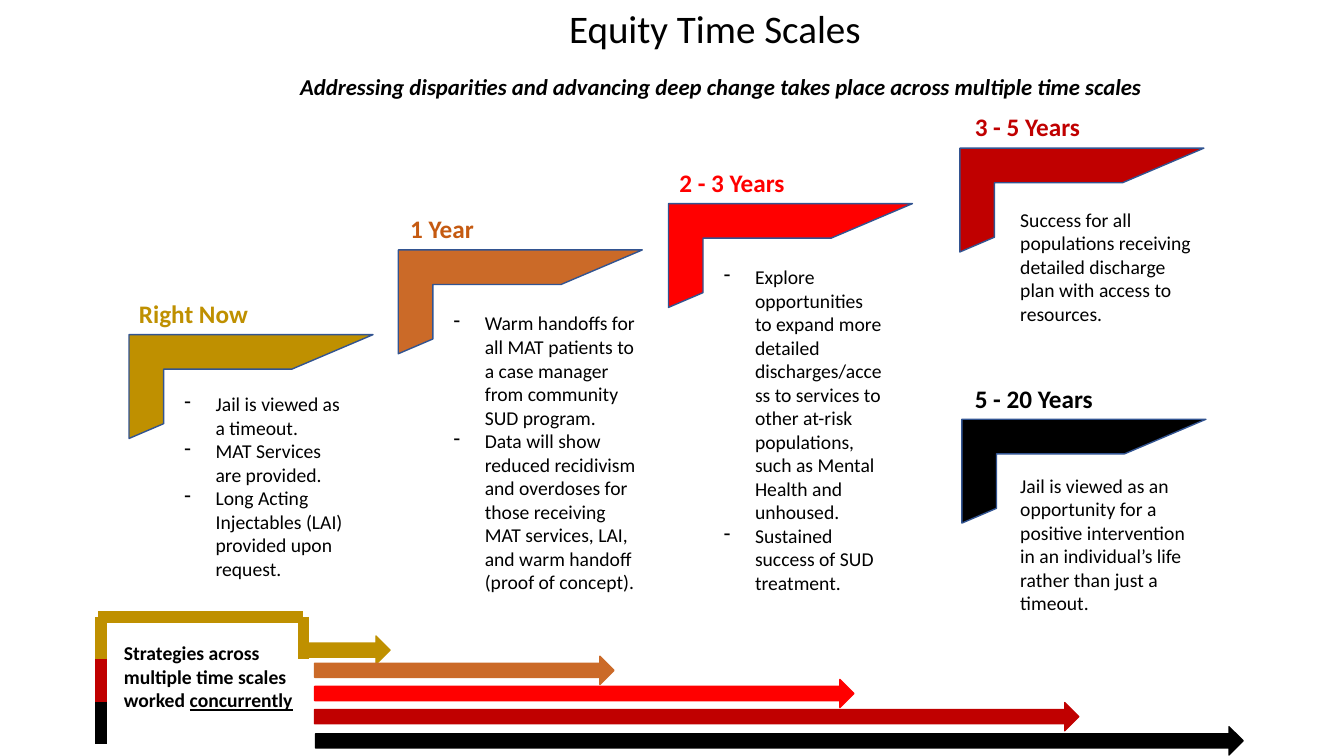
from pptx import Presentation
from pptx.dml.color import RGBColor
from pptx.enum.shapes import MSO_CONNECTOR, MSO_SHAPE
from pptx.enum.text import MSO_ANCHOR, MSO_AUTO_SIZE, PP_ALIGN
from pptx.oxml.xmlchemy import OxmlElement
from pptx.util import Inches, Pt

FONT = "Calibri"
COLORS = {
    "gold": "BF9000", "orange": "CB6A28", "rust": "C55A11", "red": "FF0000",
    "crimson": "C00000", "black": "000000", "outline": "325491",
}

TITLE = "Equity Time Scales"
SUBTITLE = "Addressing disparities and advancing deep change takes place across multiple time scales"

# label, label colour, frame colour, frame (left, top), label left, text (left, width, height), bulleted, items
STEPS = [
    ("Right Now", "gold", "gold", (1.28, 3.32), 1.28, (1.73, 1.85, 2.29), True,
     ["Jail is viewed as a timeout.", "MAT Services are provided.",
      "Long Acting Injectables (LAI) provided upon request."]),
    ("1 Year", "rust", "orange", (3.95, 2.48), 3.97, (4.4, 2.01, 3.47), True,
     ["Warm handoffs for all MAT patients to a case manager from community SUD program.",
      "Data will show reduced recidivism and overdoses for those receiving MAT services, LAI, "
      "and warm handoff (proof of concept)."]),
    ("2 - 3 Years", "red", "red", (6.63, 2.02), 6.64, (7.08, 1.79, 3.4), True,
     ["Explore opportunities to expand more detailed discharges/access to services to other "
      "at-risk populations, such as Mental Health and unhoused.",
      "Sustained success of SUD treatment."]),
    ("3 - 5 Years", "crimson", "crimson", (9.52, 1.47), 9.57, (10.02, 1.95, 1.28), False,
     ["Success for all populations receiving detailed discharge plan with access to resources."]),
    ("5 - 20 Years", "black", "black", (9.54, 4.16), 9.57, (10.02, 1.92, 1.51), False,
     ["Jail is viewed as an opportunity for a positive intervention in an individual’s life "
      "rather than just a timeout."]),
]
FRAME_SIZE = (2.42, 1.03)
LABEL_SIZE = (2.36, 0.4)
LABEL_RISE = 0.41      # label top above frame top
BULLET_INDENT = 0.31

# colour, left, top, width
ARROWS = [
    ("gold", 3.01, 6.31, 0.86),
    ("orange", 3.12, 6.51, 2.97),
    ("red", 3.12, 6.74, 5.35),
    ("crimson", 3.12, 6.97, 7.58),
    ("black", 3.13, 7.21, 9.2),
]
ARROW_HEIGHT = 0.28

# Bracket around the strategies text
BRACKET_TOP, BRACKET_STEP = 6.12, 0.42
SIDE_COLORS = ["gold", "crimson", "black"]


def color(name):
    return RGBColor.from_string(COLORS[name])


def add_span(para, text, size, color_name="black", bold=False, italic=False, underline=False):
    span = para.add_run()
    span.text = text
    font = span.font
    font.name, font.size, font.color.rgb = FONT, Pt(size), color(color_name)
    font.bold, font.italic, font.underline = bold, italic, underline


def add_box(page, left, top, width, height):
    box = page.shapes.add_textbox(Inches(left), Inches(top), Inches(width), Inches(height))
    box.text_frame.word_wrap = True
    return box.text_frame


def add_filled(page, preset, left, top, width, height, fill, line):
    shape = page.shapes.add_shape(preset, Inches(left), Inches(top), Inches(width), Inches(height))
    shape.shadow.inherit = False
    shape.fill.solid()
    shape.fill.fore_color.rgb = color(fill)
    shape.line.color.rgb = color(line)
    shape.line.width = Pt(1)


def add_bar(page, start, end, color_name):
    points = [Inches(value) for value in (*start, *end)]
    bar = page.shapes.add_connector(MSO_CONNECTOR.STRAIGHT, *points)
    bar.line.color.rgb = color(color_name)
    bar.line.width = Pt(8.5)
    bar._element.spPr.append(OxmlElement("a:effectLst"))


def add_dash(para):
    props = para._p.get_or_add_pPr()
    props.set("marL", str(Inches(BULLET_INDENT)))
    props.set("indent", str(-Inches(BULLET_INDENT)))
    bullet = OxmlElement("a:buChar")
    bullet.set("char", "-")
    props.append(bullet)


def add_title(page):
    title = page.shapes.title
    title.left, title.top = Inches(1.67), Inches(0.06)
    title.width, title.height = Inches(10.84), Inches(1.04)
    frame = title.text_frame
    frame.auto_size = MSO_AUTO_SIZE.NONE
    frame.vertical_anchor = MSO_ANCHOR.MIDDLE
    heading, tagline = frame.paragraphs[0], frame.add_paragraph()
    for para in (heading, tagline):
        para.alignment = PP_ALIGN.CENTER
        para.line_spacing = 0.9
    add_span(heading, TITLE, 27.9)
    add_span(tagline, " ", 36)
    add_span(tagline, SUBTITLE, 16.2, bold=True, italic=True)


def add_step(page, label, label_color, frame_color, corner, label_left, text_area, bulleted, items):
    left, top = corner
    add_filled(page, MSO_SHAPE.HALF_FRAME, left, top, *FRAME_SIZE, frame_color, "outline")
    heading = add_box(page, label_left, top - LABEL_RISE, *LABEL_SIZE)
    add_span(heading.paragraphs[0], label, 18, label_color, bold=True)

    text_left, width, height = text_area
    text_top = top + (0.56 if bulleted else 0.54) - (0.04 if label == "Right Now" else 0)
    if not bulleted:
        text_top = top + (0.54 if label == "3 - 5 Years" else 0.49)
    body = add_box(page, text_left, text_top, width, height)
    for index, item in enumerate(items):
        para = body.add_paragraph() if index else body.paragraphs[0]
        if bulleted:
            add_dash(para)
        add_span(para, item, 14)


def add_strategies(page):
    # Bracket
    left, right = 1, 3.01
    for index, name in enumerate(SIDE_COLORS):
        top = BRACKET_TOP + index * BRACKET_STEP
        add_bar(page, (left, top), (left, top + BRACKET_STEP), name)
    add_bar(page, (right, BRACKET_TOP), (right, BRACKET_TOP + BRACKET_STEP), "gold")
    add_bar(page, (0.97, BRACKET_TOP), (right, BRACKET_TOP), "gold")

    # Caption
    para = add_box(page, 1.13, 6.31, 2.1, 0.81).paragraphs[0]
    add_span(para, "Strategies across multiple time scales worked ", 14, bold=True)
    add_span(para, "concurrently", 14, bold=True, underline=True)

    # Arrows
    for name, arrow_left, top, width in ARROWS:
        add_filled(page, MSO_SHAPE.RIGHT_ARROW, arrow_left, top, width, ARROW_HEIGHT, name, name)


def main():
    deck = Presentation()
    deck.slide_width, deck.slide_height = Inches(13.33), Inches(7.5)
    page = deck.slides.add_slide(deck.slide_layouts[5])
    add_title(page)
    for step in STEPS:
        add_step(page, *step)
    add_strategies(page)
    deck.save("out.pptx")


if __name__ == "__main__":
    main()
